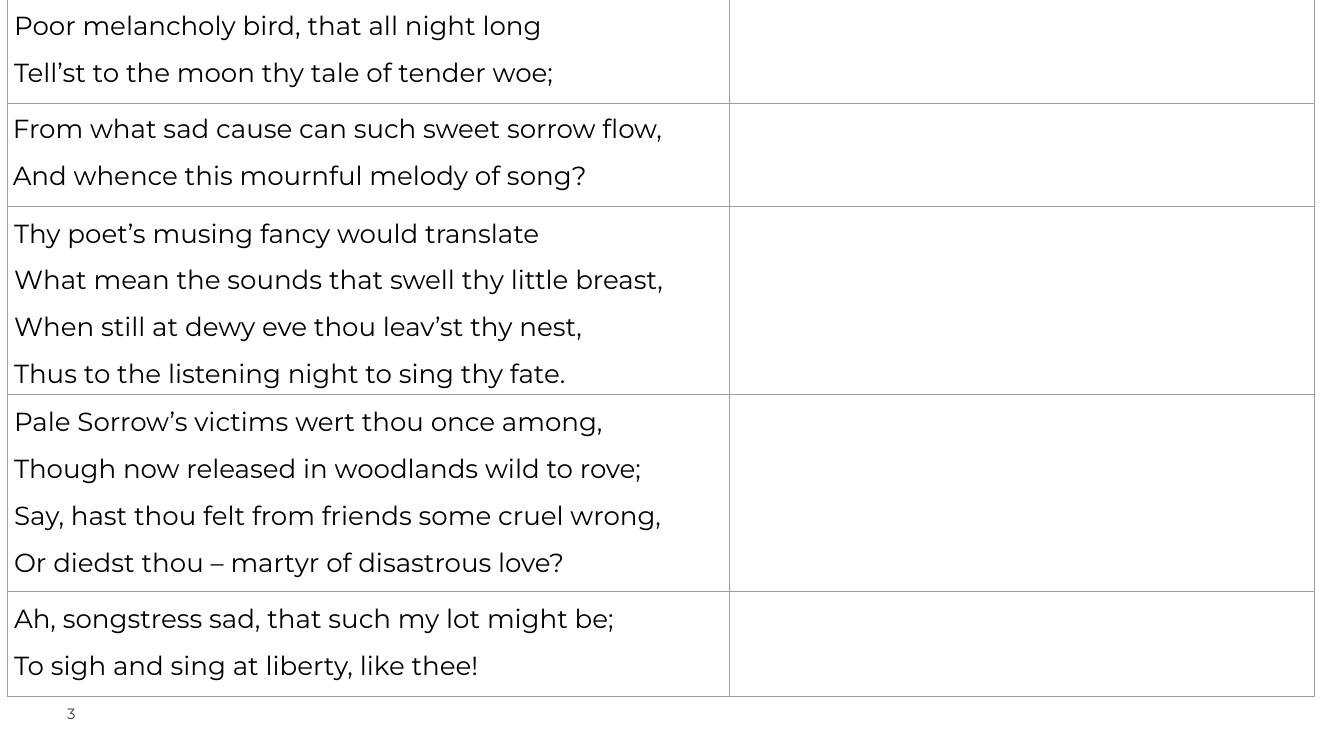
from dataclasses import dataclass

from lxml import etree
from pptx import Presentation
from pptx.dml.color import RGBColor
from pptx.oxml import ns
from pptx.util import Inches, Pt


@dataclass(frozen=True)
class Theme:
    """Colours, type and line sizes of the slide."""
    font: str = "Montserrat"
    verse_size: int = 28
    number_size: int = 16
    verse: str = "000000"
    number: str = "4B3241"
    rule: str = "9E9E9E"
    rule_width: float = 0.75
    line_spacing: float = 1.15
    verse_gap: int = 11


THEME = Theme()
COLUMN_WIDTHS = (10.75, 8.7)

# height, cell margin, gap after the last verse, verses
STANZAS = (
    (1.56, 0.1, True, (
        "Poor melancholy bird, that all night long",
        "Tell’st to the moon thy tale of tender woe;")),
    (1.53, 0.08, True, (
        "From what sad cause can such sweet sorrow flow,",
        "And whence this mournful melody of song?")),
    (2.79, 0.1, False, (
        "Thy poet’s musing fancy would translate",
        "What mean the sounds that swell thy little breast,",
        "When still at dewy eve thou leav’st thy nest,",
        "Thus to the listening night to sing thy fate.")),
    (2.93, 0.1, True, (
        "Pale Sorrow’s victims wert thou once among,",
        "Though now released in woodlands wild to rove;",
        "Say, hast thou felt from friends some cruel wrong,",
        "Or diedst thou – martyr of disastrous love?")),
    (1.56, 0.1, True, (
        "Ah, songstress sad, that such my lot might be;",
        "To sigh and sing at liberty, like thee!")),
)


def style_font(paragraph, size, color):
    """Set the typeface, size and colour of a paragraph."""
    paragraph.font.name = THEME.font
    paragraph.font.size = Pt(size)
    paragraph.font.color.rgb = RGBColor.from_string(color)


def style_cell(cell, margin):
    """Give a cell thin rules on all sides, equal margins and no fill."""
    cell.margin_left = cell.margin_right = Inches(margin)
    cell.margin_top = cell.margin_bottom = Inches(margin)
    properties = cell._tc.get_or_add_tcPr()
    for side in ("lnL", "lnR", "lnT", "lnB"):
        rule = etree.SubElement(properties, ns.qn(f"a:{side}"), w=str(Pt(THEME.rule_width)))
        fill = etree.SubElement(rule, ns.qn("a:solidFill"))
        etree.SubElement(fill, ns.qn("a:srgbClr"), val=THEME.rule)
    cell.fill.background()


def write_verses(cell, verses, gap_after):
    """Write one verse per paragraph into a cell."""
    frame = cell.text_frame
    frame.text = "\n".join(verses)
    for index, verse in enumerate(frame.paragraphs):
        verse.line_spacing = THEME.line_spacing
        verse.space_before = Pt(THEME.verse_gap if index else 0)
        style_font(verse, THEME.verse_size, THEME.verse)
    if gap_after:
        frame.paragraphs[-1].space_after = Pt(THEME.verse_gap)


def add_poem(slide):
    """Add the poem table with an empty column for notes."""
    height = sum(stanza[0] for stanza in STANZAS)
    poem = slide.shapes.add_table(
        len(STANZAS), len(COLUMN_WIDTHS), Inches(0.11), Inches(-0.02),
        Inches(sum(COLUMN_WIDTHS)), Inches(height)).table
    poem.first_row = poem.horz_banding = False
    for column, width in zip(poem.columns, COLUMN_WIDTHS):
        column.width = Inches(width)
    for row, (row_height, margin, gap_after, verses) in zip(poem.rows, STANZAS):
        row.height = Inches(row_height)
        for cell in row.cells:
            style_cell(cell, margin)
        write_verses(row.cells[0], verses, gap_after)


def add_page_number(slide, number):
    """Add the page number below the poem."""
    frame = slide.shapes.add_textbox(
        Inches(1), Inches(10.48), Inches(1.57), Inches(0.39)).text_frame
    frame.word_wrap = True
    frame.margin_left = frame.margin_right = 0
    frame.margin_top = frame.margin_bottom = 0
    frame.text = number
    style_font(frame.paragraphs[0], THEME.number_size, THEME.number)


def main():
    """Build and save the slide."""
    deck = Presentation()
    deck.slide_width, deck.slide_height = Inches(20), Inches(11.25)
    slide = deck.slides.add_slide(deck.slide_layouts[6])
    add_page_number(slide, "3")
    add_poem(slide)
    deck.save("out.pptx")


if __name__ == "__main__":
    main()
